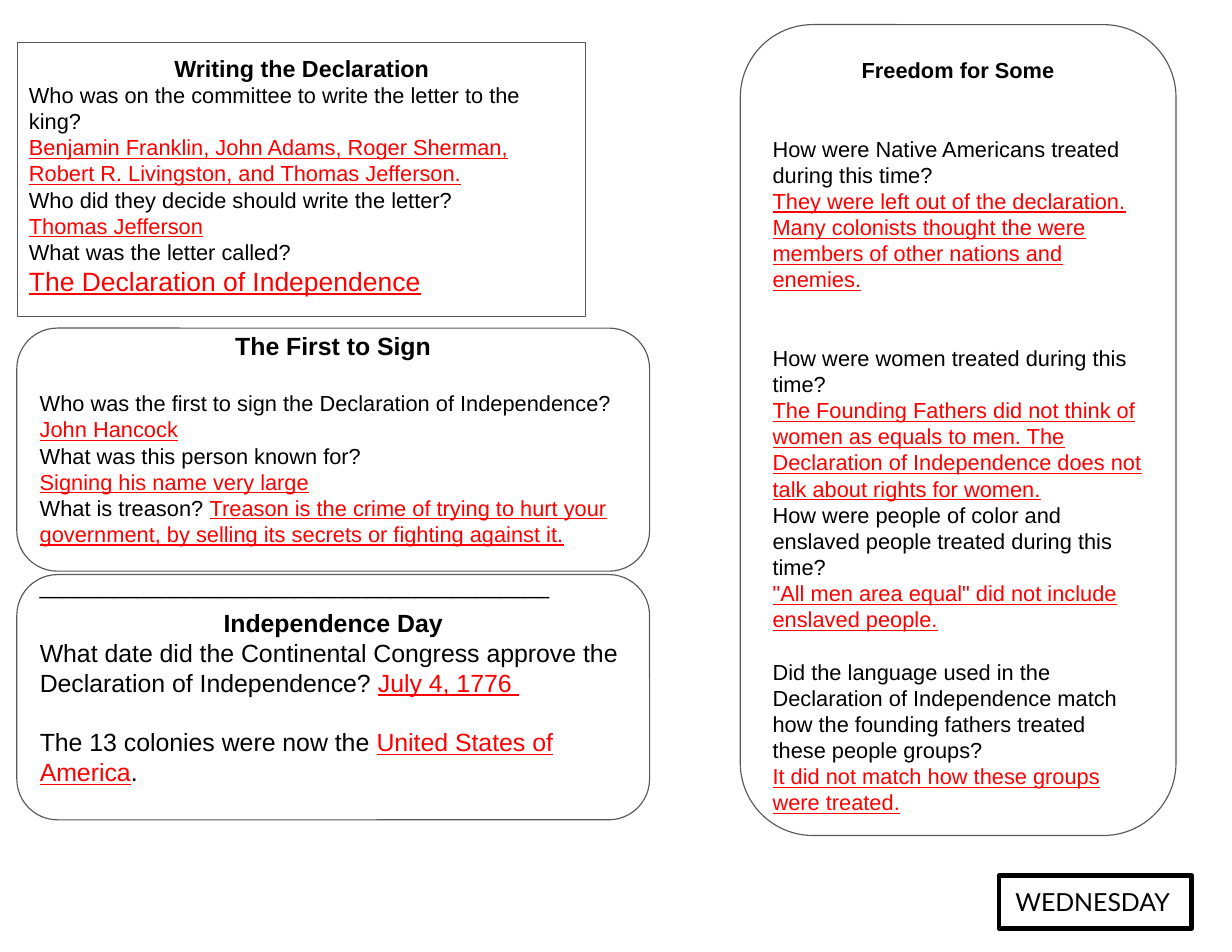
from pptx import Presentation
from pptx.dml.color import RGBColor
from pptx.enum.shapes import MSO_SHAPE
from pptx.enum.text import MSO_ANCHOR, PP_ALIGN
from pptx.util import Inches, Pt

BLACK, RED, GRAY, WHITE = "000000", "FF0000", "595959", "FFFFFF"
LINE_HEIGHT = 1.2  # height of one line, relative to the text size


def color(hex_string):
    return RGBColor.from_string(hex_string)


class Worksheet:
    """Style of the worksheet and the slide being filled."""

    font_name = "Arial"

    def __init__(self, presentation):
        self.slide = presentation.slides.add_slide(presentation.slide_layouts[6])

    def box(self, left, top, width, height, kind=MSO_SHAPE.ROUNDED_RECTANGLE,
            line=GRAY, weight=0.75, fill=None, anchor=MSO_ANCHOR.TOP, top_inset=0.1):
        shape = self.slide.shapes.add_shape(
            kind, Inches(left), Inches(top), Inches(width), Inches(height))
        shape.shadow.inherit = False
        if fill:
            shape.fill.solid()
            shape.fill.fore_color.rgb = color(fill)
        else:
            shape.fill.background()
        shape.line.color.rgb = color(line)
        shape.line.width = Pt(weight)
        frame = shape.text_frame
        frame.word_wrap = True
        frame.vertical_anchor = anchor
        frame.margin_left = frame.margin_right = frame.margin_bottom = Inches(0.1)
        frame.margin_top = Inches(top_inset)
        return frame

    def paragraph(self, frame, align=PP_ALIGN.LEFT, gap=0):
        first = frame.paragraphs[0]
        paragraph = frame.add_paragraph() if first.runs else first
        paragraph.alignment = align
        paragraph.line_spacing = 1.0
        paragraph.space_before = Pt(gap * LINE_HEIGHT)
        return paragraph

    def run(self, paragraph, text, size, hex_string=BLACK, bold=False,
            underline=False, font_name=None):
        run = paragraph.add_run()
        run.text = text
        font = run.font
        font.name = font_name or self.font_name
        font.size = Pt(size)
        font.bold = bold
        font.underline = underline
        font.color.rgb = color(hex_string)

    def heading(self, frame, text, size):
        self.run(self.paragraph(frame, PP_ALIGN.CENTER), text, size, bold=True)

    def question(self, frame, text, size=14, gap=0):
        paragraph = self.paragraph(frame, gap=gap)
        self.run(paragraph, text, size)
        return paragraph

    def answer(self, paragraph, text, size=14):
        self.run(paragraph, text, size, RED, underline=True)

    def pairs(self, frame, rows):
        """Questions with the answer in the paragraph below."""
        for gap, question, answer, answer_size in rows:
            self.question(frame, question, gap=gap)
            self.answer(self.paragraph(frame), answer, answer_size)


def main():
    presentation = Presentation()
    presentation.slide_width = Inches(11)
    presentation.slide_height = Inches(8.5)
    sheet = Worksheet(presentation)

    # Writing the Declaration
    writing = sheet.box(0.16, 0.38, 5.07, 2.45, MSO_SHAPE.RECTANGLE)
    sheet.heading(writing, "Writing the Declaration", 15)
    sheet.pairs(writing, [
        (0, "Who was on the committee to write the letter to the king?",
         "Benjamin Franklin, John Adams, Roger Sherman, Robert R. Livingston, "
         "and Thomas Jefferson.", 14),
        (0, "Who did they decide should write the letter?", "Thomas Jefferson", 14),
        (0, "What was the letter called?", "The Declaration of Independence", 17),
    ])

    # Day label
    day = sheet.box(8.92, 7.82, 1.72, 0.47, MSO_SHAPE.RECTANGLE, BLACK, 3)
    sheet.run(sheet.paragraph(day, PP_ALIGN.CENTER), "WEDNESDAY ", 16,
              font_name="Lato")

    # Freedom for Some
    freedom = sheet.box(6.61, 0.22, 3.89, 7.24, fill=WHITE)
    sheet.heading(freedom, "Freedom for Some", 14)
    sheet.pairs(freedom, [
        (28, "How were Native Americans treated during this time?",
         "They were left out of the declaration. Many colonists thought the were "
         "members of other nations and enemies.", 14),
        (28, "How were women treated during this time?",
         "The Founding Fathers did not think of women as equals to men. The "
         "Declaration of Independence does not talk about rights for women.", 14),
        (0, "How were people of color and enslaved people treated during this time?",
         '"All men area equal" did not include enslaved people.', 14),
        (14, "Did the language used in the Declaration of Independence match how "
         "the founding fathers treated these people groups?",
         "It did not match how these groups were treated.", 14),
    ])

    # The First to Sign, whose writing line runs past the lower edge
    signing = sheet.box(0.15, 2.93, 5.65, 2.17, anchor=MSO_ANCHOR.MIDDLE,
                        top_inset=0.37)
    sheet.heading(signing, "The First to Sign", 16)
    sheet.pairs(signing, [
        (16, "Who was the first to sign the Declaration of Independence?",
         "John Hancock", 14),
        (0, "What was this person known for?", "Signing his name very large", 14),
    ])
    treason = sheet.question(signing, "What is treason? ")
    sheet.answer(treason, "Treason is the crime of trying to hurt your government, "
                 "by selling its secrets or fighting against it.")
    sheet.question(signing, "_" * 42, gap=14)

    # Independence Day
    independence = sheet.box(0.15, 5.13, 5.65, 2.19, anchor=MSO_ANCHOR.MIDDLE)
    sheet.heading(independence, "Independence Day", 16)
    date = sheet.question(independence, "What date did the Continental Congress "
                          "approve the Declaration of Independence? ", 16)
    sheet.answer(date, "July 4, 1776 ", 16)
    colonies = sheet.question(independence, "The 13 colonies were now the ", 16, gap=16)
    sheet.answer(colonies, "United States of America", 16)
    sheet.run(colonies, ".", 16)

    presentation.save("out.pptx")


if __name__ == "__main__":
    main()
